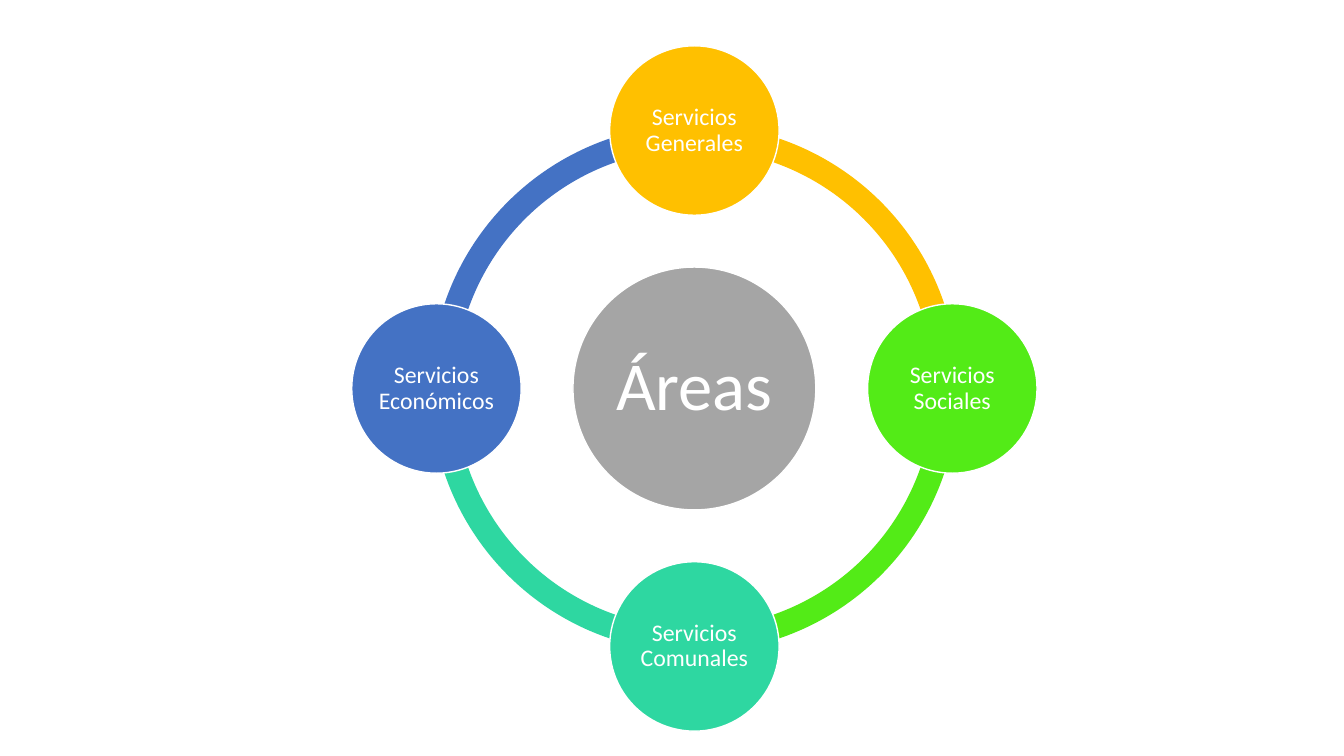
"""Build a radial diagram of four service areas around a central hub."""
import math

import pptx
import pptx.dml.color
import pptx.enum.shapes
import pptx.enum.text
import pptx.util

Cm, Pt = pptx.util.Cm, pptx.util.Pt
SHAPE = pptx.enum.shapes.MSO_SHAPE
COLORS = {
    "white": "FFFFFF",
    "gray": "A5A5A5",
    "amber": "FFC000",
    "lime": "53EB17",
    "mint": "2ED7A1",
    "blue": "4472C4",
}
CENTER_X, CENTER_Y = 17.5, 9.79
ORBIT = 6.5
RING_SIZE, HUB_SIZE, AREA_SIZE = 13.3, 6.12, 4.27
AREAS = [
    ("Servicios Generales", "amber", 270),
    ("Servicios Sociales", "lime", 0),
    ("Servicios Comunales", "mint", 90),
    ("Servicios Económicos", "blue", 180),
]


class Diagram:
    """Hold the style and the current slide."""

    font = "Calibri"

    def __init__(self, slide):
        self.slide = slide

    def rgb(self, name):
        return pptx.dml.color.RGBColor.from_string(COLORS[name])

    def shape(self, kind, x, y, size, color):
        s = self.slide.shapes.add_shape(
            kind, Cm(x - size / 2), Cm(y - size / 2), Cm(size), Cm(size))
        s.shadow.inherit = False
        s.fill.solid()
        s.fill.fore_color.rgb = self.rgb(color)
        return s

    def arc(self, start, color):
        s = self.shape(SHAPE.BLOCK_ARC, CENTER_X, CENTER_Y, RING_SIZE, color)
        s.line.fill.background()
        s.adjustments[0] = start * 0.6
        s.adjustments[1] = (start + 90) % 360 * 0.6
        s.adjustments[2] = 0.046

    def circle(self, text, x, y, size, color, font_size, inset):
        s = self.shape(SHAPE.OVAL, x, y, size, color)
        s.line.color.rgb = self.rgb("white")
        s.line.width = Pt(1)
        tf = s.text_frame
        tf.text = text
        tf.word_wrap = True
        tf.vertical_anchor = pptx.enum.text.MSO_ANCHOR.MIDDLE
        tf.margin_left = tf.margin_right = Cm(inset)
        tf.margin_top = tf.margin_bottom = Cm(inset)
        p = tf.paragraphs[0]
        p.alignment = pptx.enum.text.PP_ALIGN.CENTER
        p.line_spacing = 0.9
        r = p.runs[0]
        r.font.name = self.font
        r.font.size = Pt(font_size)
        r.font.color.rgb = self.rgb("white")


def main():
    prs = pptx.Presentation()
    prs.slide_width, prs.slide_height = Cm(33.87), Cm(19.05)
    diagram = Diagram(prs.slides.add_slide(prs.slide_layouts[6]))
    for _, color, angle in reversed(AREAS):
        diagram.arc(angle, color)
    diagram.circle("Áreas", CENTER_X, CENTER_Y, HUB_SIZE, "gray", 49, 0.18)
    for text, color, angle in AREAS:
        x = CENTER_X + ORBIT * math.cos(math.radians(angle))
        y = CENTER_Y + ORBIT * math.sin(math.radians(angle))
        diagram.circle(text, x, y, AREA_SIZE, color, 17, 0.05)
    prs.save("out.pptx")


if __name__ == "__main__":
    main()
